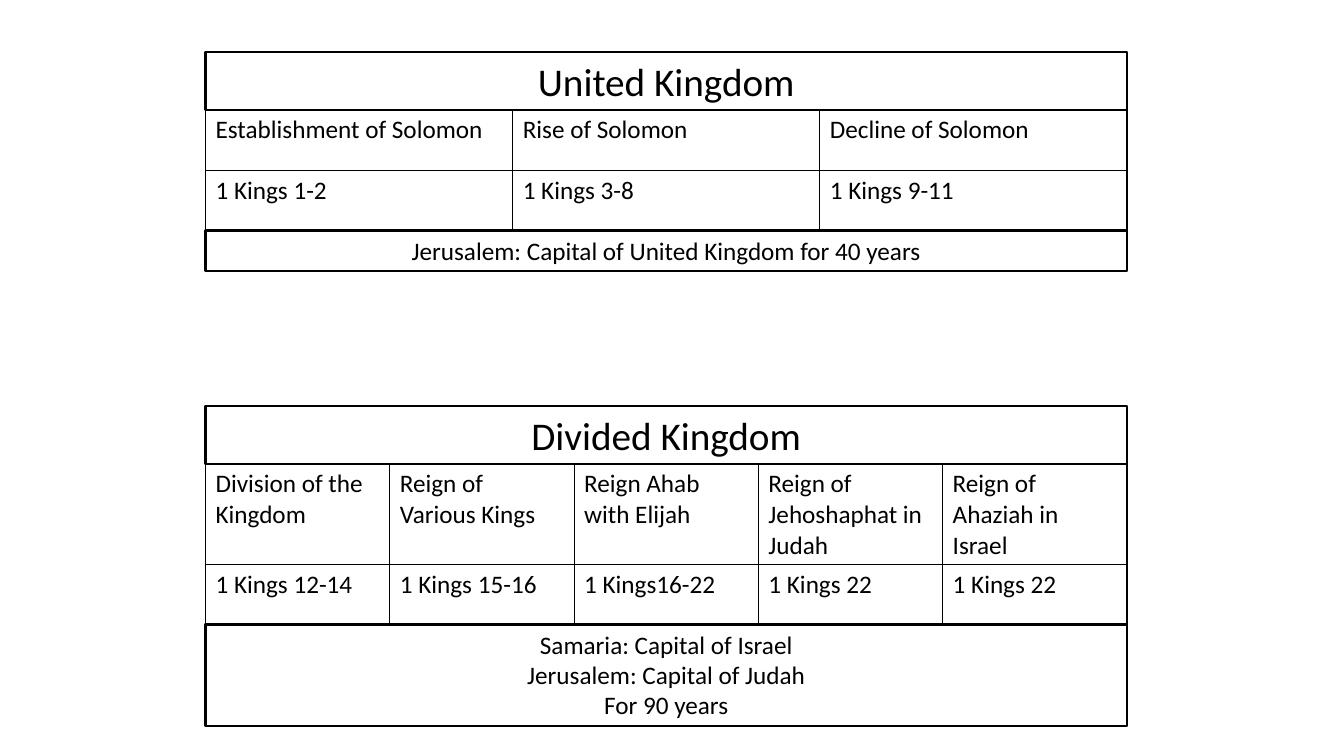
from lxml.etree import SubElement
from pptx import Presentation
from pptx.dml.color import RGBColor
from pptx.enum.shapes import MSO_SHAPE as SHAPE
from pptx.enum.text import MSO_ANCHOR as ANCHOR, MSO_AUTO_SIZE as AUTO, PP_ALIGN as ALIGN
from pptx.oxml.ns import qn
from pptx.util import Cm, Pt

COLORS = {"ink": "000000"}
INK = RGBColor.from_string(COLORS["ink"])
LEFT, WIDTH = 5.18, 23.22
TITLE_H, ROW_H = 1.45, 1.52

KINGDOMS = [
    {
        "top": 1.32, "title": "United Kingdom", "period_h": ROW_H, "capital_h": 1.02,
        "rows": [
            ["Establishment of Solomon", "Rise of Solomon", "Decline of Solomon"],
            ["1 Kings 1-2", "1 Kings 3-8", "1 Kings 9-11"],
        ],
        "capitals": ["Jerusalem: Capital of United Kingdom for 40 years"],
    },
    {
        "top": 10.24, "title": "Divided Kingdom", "period_h": 2.52, "capital_h": 2.57,
        "rows": [
            ["Division of the Kingdom", "Reign of Various Kings", "Reign Ahab with Elijah",
             "Reign of Jehoshaphat in Judah", "Reign of Ahaziah in Israel"],
            ["1 Kings 12-14", "1 Kings 15-16", "1 Kings16-22", "1 Kings 22", "1 Kings 22"],
        ],
        "capitals": ["Samaria: Capital of Israel", "Jerusalem: Capital of Judah", "For 90 years"],
    },
]


def set_all(obj, formats):
    """Set each attribute of obj from a dict of format values."""
    for name, value in formats.items():
        setattr(obj, name, value)


def write(tf, lines, size, align):
    """Write one paragraph per line into a text frame."""
    for i, line in enumerate(lines):
        p = tf.add_paragraph() if i else tf.paragraphs[0]
        p.alignment = align
        r = p.add_run()
        r.text = line
        set_all(r.font, {"name": "Calibri", "size": Pt(size), "bold": False})
        r.font.color.rgb = INK


def add_box(s, top, height, lines, size):
    """Add an outlined, unfilled box with centred text."""
    sp = s.shapes.add_shape(SHAPE.RECTANGLE, Cm(LEFT), Cm(top), Cm(WIDTH), Cm(height))
    sp.shadow.inherit = False
    sp.fill.background()
    sp.line.color.rgb = INK
    sp.line.width = Pt(1.5)
    set_all(sp.text_frame, {"word_wrap": True, "auto_size": AUTO.SHAPE_TO_FIT_TEXT,
                            "vertical_anchor": ANCHOR.TOP})
    write(sp.text_frame, lines, size, ALIGN.CENTER)


def add_borders(cell):
    """Draw a thin line on all four sides of a cell."""
    tcPr = cell._tc.get_or_add_tcPr()
    for side in ("a:lnL", "a:lnR", "a:lnT", "a:lnB"):
        ln = SubElement(tcPr, qn(side), w=str(Pt(1)))
        fill = SubElement(ln, qn("a:solidFill"))
        SubElement(fill, qn("a:srgbClr"), val=COLORS["ink"])


def add_grid(s, top, rows, heights):
    """Add a plain bordered table with equal columns."""
    frame = s.shapes.add_table(len(rows), len(rows[0]), Cm(LEFT), Cm(top),
                               Cm(WIDTH), Cm(sum(heights)))
    tbl = frame.table
    set_all(tbl, {"first_row": False, "horz_banding": False})
    for row, height, texts in zip(tbl.rows, heights, rows):
        row.height = Cm(height)
        for cell, text in zip(row.cells, texts):
            add_borders(cell)
            cell.fill.background()
            write(cell.text_frame, [text], 18, ALIGN.LEFT)


def add_kingdom(s, top, title, period_h, capital_h, rows, capitals):
    """Stack a title box, a table of reigns and a box of capitals."""
    heights = [period_h, ROW_H]
    grid_top = top + TITLE_H
    add_grid(s, grid_top, rows, heights)
    add_box(s, top, TITLE_H, [title], 28)
    add_box(s, grid_top + sum(heights), capital_h, capitals, 18)


def main():
    """Build the slide and save it."""
    prs = Presentation()
    set_all(prs, {"slide_width": Cm(33.87), "slide_height": Cm(19.05)})
    s = prs.slides.add_slide(prs.slide_layouts[6])
    for kingdom in KINGDOMS:
        add_kingdom(s, **kingdom)
    prs.save("out.pptx")


if __name__ == "__main__":
    main()
